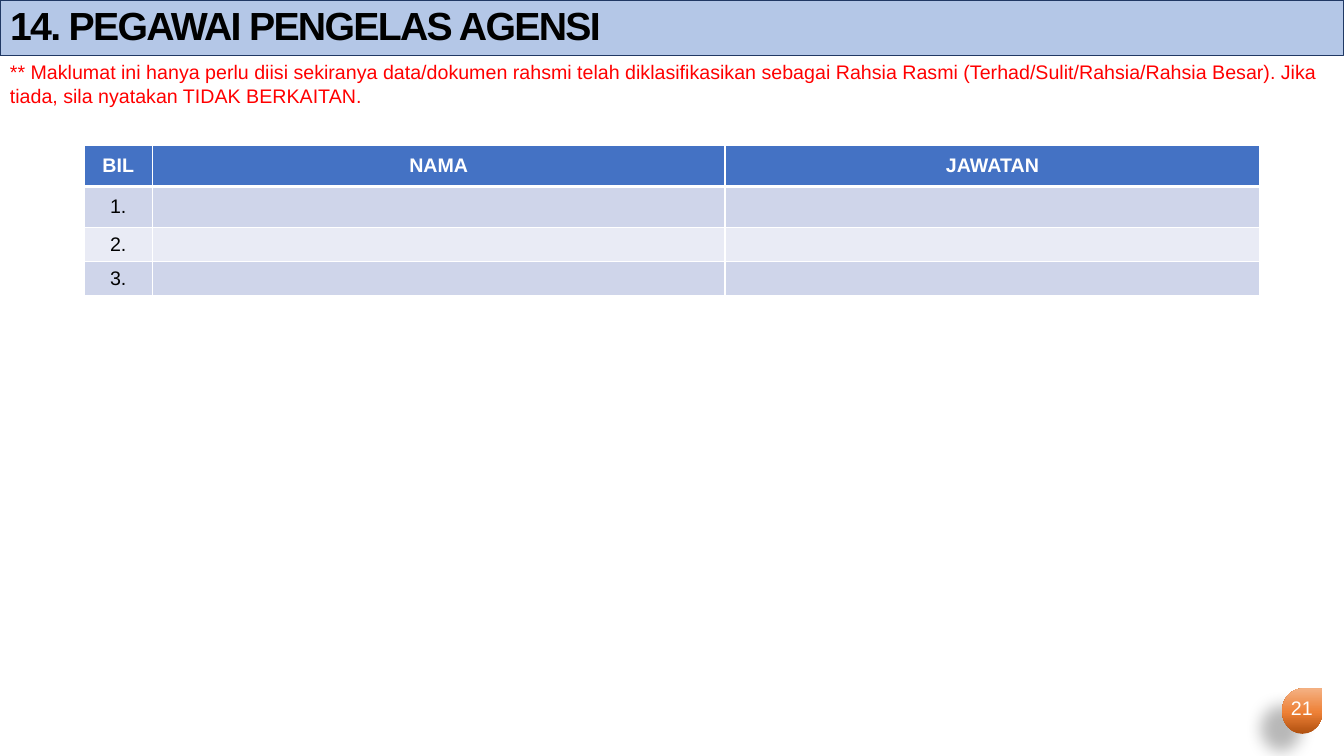
from lxml.etree import SubElement as Sub
from pptx import Presentation
from pptx.dml.color import RGBColor
from pptx.enum.shapes import MSO_SHAPE as Form
from pptx.enum.text import MSO_ANCHOR as Anchor, MSO_AUTO_SIZE as Fit, PP_ALIGN as Align
from pptx.oxml import parse_xml
from pptx.oxml.ns import nsdecls, qn
from pptx.util import Inches, Pt


def tint(code):
    return RGBColor.from_string(code)


class Page:
    font = "Arial"
    size = 14
    white = "FFFFFF"
    black = "000000"

    def __init__(self, deck):
        self.col = deck.slide_width / 160
        self.row = deck.slide_height / 90
        self.slide = deck.slides.add_slide(deck.slide_layouts[5])
        self.shapes = self.slide.shapes

    def box(self, x, y, w, h):
        return [round(v) for v in (x * self.col, y * self.row, w * self.col, h * self.row)]

    def words(self, frame, text, color, size=None, bold=False, align=Align.LEFT):
        para = frame.paragraphs[0]
        para.alignment = align
        run = para.add_run()
        run.text = text
        face = run.font
        face.name, face.size, face.bold = self.font, Pt(size or self.size), bold
        face.color.rgb = tint(color)
        return run

    def title(self, text, area):
        bar = self.shapes.title
        bar.left, bar.top, bar.width, bar.height = self.box(*area)
        bar.fill.solid()
        bar.fill.fore_color.rgb = tint("B4C7E7")
        bar.line.color.rgb = tint("203864")
        bar.line.width = Pt(0.75)
        frame = bar.text_frame
        frame.auto_size = Fit.NONE
        frame.vertical_anchor = Anchor.MIDDLE
        run = self.words(frame, text, self.black, 28, True)
        run._r.get_or_add_rPr().set("spc", "-120")
        frame.paragraphs[0].line_spacing = 0.9

    def text(self, text, area, color, align=Align.LEFT):
        frame = self.shapes.add_textbox(*self.box(*area)).text_frame
        frame.word_wrap = True
        self.words(frame, text, color, align=align)

    def badge(self, text, area, label, stops):
        drop = self.shapes.add_shape(Form.TEAR, *self.box(*area))
        drop.line.fill.background()
        drop.shadow.inherit = False
        marks = "".join(
            f'<a:gs pos="{pos * 1000}"><a:srgbClr val="{code}"/></a:gs>' for pos, code in stops)
        props = drop._element.spPr
        props.find(qn("a:prstGeom")).addnext(parse_xml(
            f'<a:gradFill {nsdecls("a")} rotWithShape="1"><a:gsLst>{marks}</a:gsLst>'
            '<a:lin ang="16200000" scaled="0"/></a:gradFill>'))
        props.find(qn("a:effectLst")).append(parse_xml(
            f'<a:outerShdw {nsdecls("a")} blurRad="{Pt(11.8)}" dist="{Pt(19.7)}" '
            f'dir="{141 * 60000}" algn="ctr" rotWithShape="0">'
            f'<a:srgbClr val="{self.black}"><a:alpha val="28000"/></a:srgbClr></a:outerShdw>'))
        self.text(text, label, self.white, Align.CENTER)

    def edge(self, cell, side, width):
        props = cell._tc.get_or_add_tcPr()
        line = Sub(props, qn(f"a:ln{side}"), w=str(Pt(width)))
        Sub(Sub(line, qn("a:solidFill")), qn("a:srgbClr"), val=self.white)

    def table(self, rows, x, y, cols, highs):
        area = self.box(x, y, sum(cols), sum(highs))
        grid = self.shapes.add_table(len(rows), len(cols), *area).table
        for col, wide in zip(grid.columns, cols):
            col.width = round(wide * self.col)
        for i, (row, high) in enumerate(zip(rows, highs)):
            grid.rows[i].height = round(high * self.row)
            head = i == 0
            fill = "4472C4" if head else ("E9EBF5", "CFD5EA")[i % 2]
            for j, text in enumerate(row):
                cell = grid.cell(i, j)
                cell.vertical_anchor = Anchor.MIDDLE
                for side in "LRTB":
                    thick = head and side == "B" or i == 1 and side == "T"
                    self.edge(cell, side, 3 if thick else 1)
                cell.fill.solid()
                cell.fill.fore_color.rgb = tint(fill)
                if text:
                    color = self.white if head else self.black
                    self.words(cell.text_frame, text, color, bold=head, align=Align.CENTER)
                else:
                    para = cell.text_frame.paragraphs[0]._p
                    Sub(para, qn("a:endParaRPr"), sz=str(self.size * 100))


def main():
    deck = Presentation()
    deck.slide_width, deck.slide_height = Inches(13.33), Inches(7.5)
    page = Page(deck)
    page.badge("21", (152.64, 81.96, 4.8, 5.4), (152.04, 82.32, 5.88, 4.8),
               [(0, "B0500F"), (48, "EE8137"), (100, "F4B183")])
    page.text("** Maklumat ini hanya perlu diisi sekiranya data/dokumen rahsmi telah "
              "diklasifikasikan sebagai Rahsia Rasmi (Terhad/Sulit/Rahsia/Rahsia Besar). "
              "Jika tiada, sila nyatakan TIDAK BERKAITAN.", (0, 6.6, 160, 6.84), "FF0000")
    page.title("14. PEGAWAI PENGELAS AGENSI", (0, 0, 160, 6.6))
    rows = [("BIL", "NAMA", "JAWATAN")] + [(f"{n}.", "", "") for n in range(1, 4)]
    page.table(rows, 10, 17.28, (8.16, 68.16, 63.68), (4.92, 4.92, 3.96, 3.96))
    deck.save("out.pptx")


if __name__ == "__main__":
    main()
